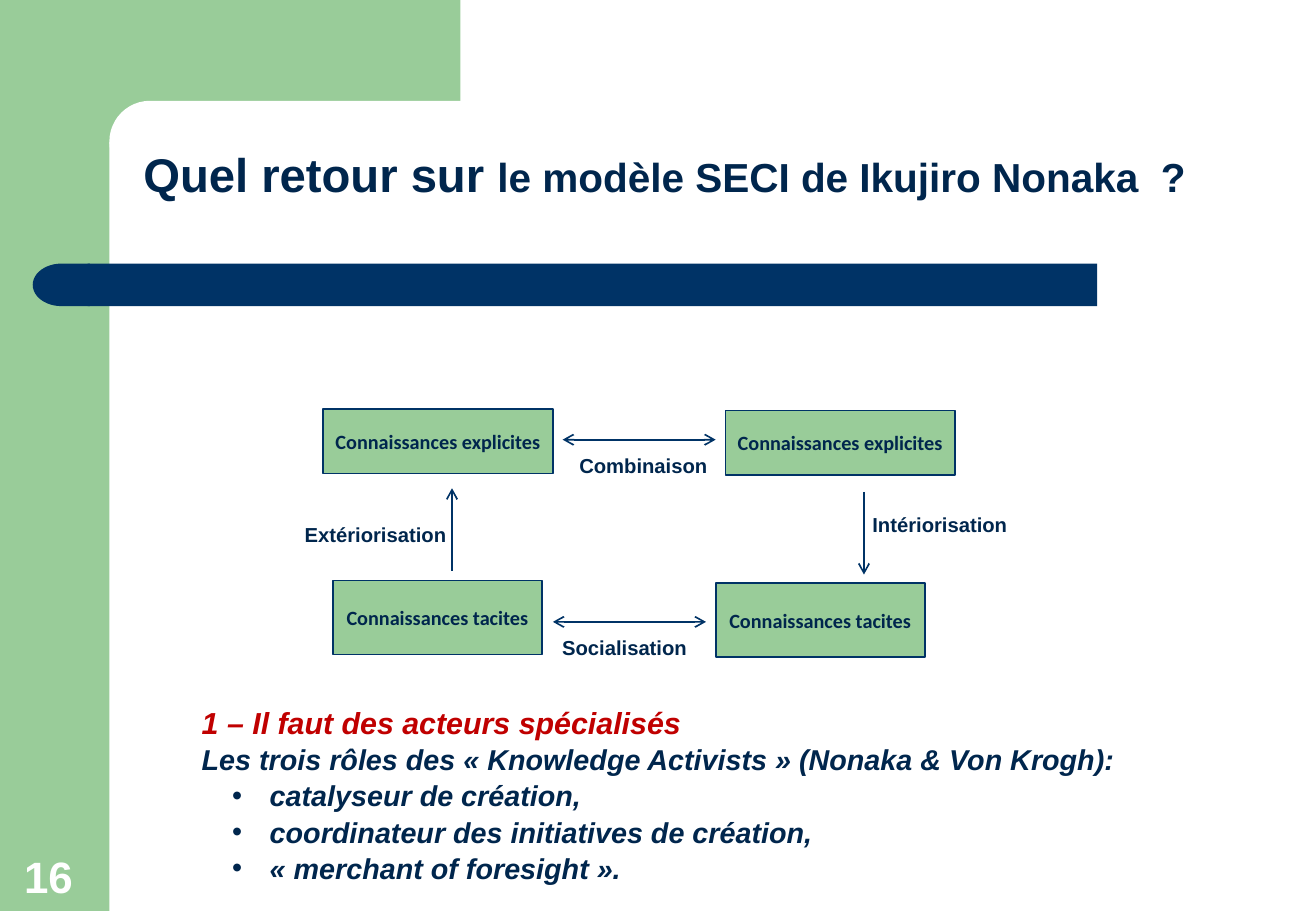
from collections import namedtuple

from lxml.etree import SubElement
from pptx import Presentation
from pptx.dml.color import RGBColor
from pptx.enum.shapes import MSO_CONNECTOR as CONN, MSO_SHAPE as SHAPE
from pptx.enum.text import MSO_ANCHOR as ANCHOR, MSO_AUTO_SIZE as AUTO, PP_ALIGN as ALIGN
from pptx.oxml.ns import qn
from pptx.util import Pt

PX = 9144  # 100 px to the inch
Box = namedtuple("Box", "x y w h")
COLORS = {"green": "99CC99", "navy": "003366", "ink": "00264D",
          "red": "C00000", "white": "FFFFFF"}

SLIDE = Box(0, 0, 1083, 750)
TITLE = Box(108, 83, 948, 125)
DIAGRAM = Box(240, 337, 600, 211)
ROLES = Box(156, 573, 866, 155)
NUMBER = Box(10, 650, 70, 98)

LABEL = {"size": 12, "color": "ink", "bold": True}
ROLE = {"size": 17, "color": "ink", "bold": True, "italic": True}


def rgb(name):
    return RGBColor.from_string(COLORS[name])


def emu(*lengths):
    return [n * PX for n in lengths]


def inside(box, x, y, w, h):
    """Box given by its offset from the corner of another box."""
    return Box(box.x + x, box.y + y, w, h)


def add_run(p, text, size, color, name="Arial", **formats):
    r = p.add_run()
    r.text = text
    r.font.color.rgb = rgb(color)
    for key, value in {"size": Pt(size), "name": name, **formats}.items():
        setattr(r.font, key, value)


def set_frame(sp, **formats):
    tf = sp.text_frame
    for key, value in {"auto_size": AUTO.NONE, "word_wrap": True, **formats}.items():
        setattr(tf, key, value)
    return tf


def add_block(slide, kind, box, fill, line=None):
    sp = slide.shapes.add_shape(kind, *emu(*box))
    sp.shadow.inherit = False
    sp.fill.solid()
    sp.fill.fore_color.rgb = rgb(fill)
    if line:
        sp.line.color.rgb = rgb(line)
        sp.line.width = Pt(1)
    else:
        sp.line.fill.background()
    return sp


def add_arrow(slide, box, start, end, ends):
    points = [box.x + start[0], box.y + start[1], box.x + end[0], box.y + end[1]]
    line = slide.shapes.add_connector(CONN.STRAIGHT, *emu(*points))
    line.line.color.rgb = rgb("navy")
    line.line.width = Pt(1)
    for tag in ends:
        SubElement(line.line._ln, qn(tag), type="arrow")
    SubElement(line._element.spPr, qn("a:effectLst"))


def add_text(slide, box, text, align, anchor, **font):
    sp = slide.shapes.add_textbox(*emu(*box))
    p = set_frame(sp, vertical_anchor=anchor).paragraphs[0]
    p.alignment = align
    add_run(p, text, **font)
    return sp


def place_placeholder(slide, sp, box):
    """Move a placeholder to its box, in front of what is drawn so far."""
    sp.left, sp.top, sp.width, sp.height = emu(*box)
    slide.shapes._spTree.append(sp._element)


def draw_backdrop(slide, box):
    for kind, place, fill in (
        (SHAPE.RECTANGLE, (0, 0, 90, box.h), "green"),
        (SHAPE.RECTANGLE, (81, 0, 298, 117), "green"),
        (SHAPE.ROUNDED_RECTANGLE, (90, 83, 605, 67), "white"),
        (SHAPE.RECTANGLE, (72, 217, 831, 35), "navy"),
        (SHAPE.FLOWCHART_DELAY, (27, 217, 47, 35), "navy"),
    ):
        sp = add_block(slide, kind, inside(box, *place), fill)
        if kind == SHAPE.ROUNDED_RECTANGLE:
            sp.adjustments[0] = 0.5
        if kind == SHAPE.FLOWCHART_DELAY:
            sp._element.spPr.xfrm.set("flipH", "1")


def draw_title(slide, box):
    sp = slide.shapes.title
    place_placeholder(slide, sp, box)
    p = set_frame(sp, vertical_anchor=ANCHOR.MIDDLE).paragraphs[0]
    p.alignment, p.line_spacing = ALIGN.LEFT, 0.9
    add_run(p, "Quel retour sur ", 28, "ink", bold=True)
    add_run(p, "le modèle SECI de Ikujiro Nonaka  ?", 24, "ink", bold=True)


def draw_diagram(slide, box):
    for text, place in (
        ("Connaissances explicites", (26, 0, 189, 53)),
        ("Connaissances explicites", (357, 1, 189, 53)),
        ("Connaissances tacites", (34, 141, 172, 61)),
        ("Connaissances tacites", (349, 143, 172, 61)),
    ):
        sp = add_block(slide, SHAPE.RECTANGLE, inside(box, *place), "green", "navy")
        p = set_frame(sp, word_wrap=False, vertical_anchor=ANCHOR.MIDDLE).paragraphs[0]
        p.alignment = ALIGN.CENTER
        add_run(p, text, name="Calibri", **LABEL)

    both, tail = ("a:headEnd", "a:tailEnd"), ("a:tailEnd",)
    for start, end, ends in (
        ((223, 25), (349, 25), both),
        ((132, 133), (132, 65), tail),
        ((471, 68), (471, 136), tail),
        ((215, 175), (341, 175), both),
    ):
        add_arrow(slide, box, start, end, ends)

    for text, x, y, w in (
        ("Extériorisation", 0, 88, 138),
        ("Intériorisation", 467, 80, 133),
        ("Combinaison", 226, 31, 127),
        ("Socialisation", 212, 181, 124),
    ):
        sp = add_text(slide, inside(box, x, y, w, 30), text, ALIGN.CENTER, ANCHOR.TOP, **LABEL)
        sp.text_frame.word_wrap = False


def draw_roles(slide, box):
    sp = slide.placeholders[1]
    place_placeholder(slide, sp, box)
    tf = set_frame(sp, vertical_anchor=ANCHOR.TOP)
    for i, (text, bullet, formats) in enumerate((
        ("1 – Il faut des acteurs spécialisés", False, {"size": 18, "color": "red"}),
        ("Les trois rôles des « Knowledge Activists » (Nonaka & Von Krogh):", False, {}),
        ("catalyseur de création,", True, {}),
        ("coordinateur des initiatives de création,", True, {}),
        ("« merchant of foresight ».", True, {}),
    )):
        p = tf.add_paragraph() if i else tf.paragraphs[0]
        p.space_before, p.line_spacing = Pt(0), 1.05
        add_run(p, text, **{**ROLE, **formats})
        pPr = p._p.get_or_add_pPr()
        margin, indent = (56, -31) if bullet else (0, 0)
        pPr.set("marL", str(margin * PX))
        pPr.set("indent", str(indent * PX))
        if bullet:
            SubElement(pPr, qn("a:buChar"), char="•")
        else:
            SubElement(pPr, qn("a:buNone"))


def main():
    prs = Presentation()
    prs.slide_width, prs.slide_height = emu(SLIDE.w, SLIDE.h)
    slide = prs.slides.add_slide(prs.slide_layouts[1])
    draw_backdrop(slide, SLIDE)
    draw_title(slide, TITLE)
    draw_diagram(slide, DIAGRAM)
    draw_roles(slide, ROLES)
    add_text(slide, NUMBER, "16", ALIGN.LEFT, ANCHOR.BOTTOM, size=26, color="white", bold=True)
    prs.save("out.pptx")


if __name__ == "__main__":
    main()
